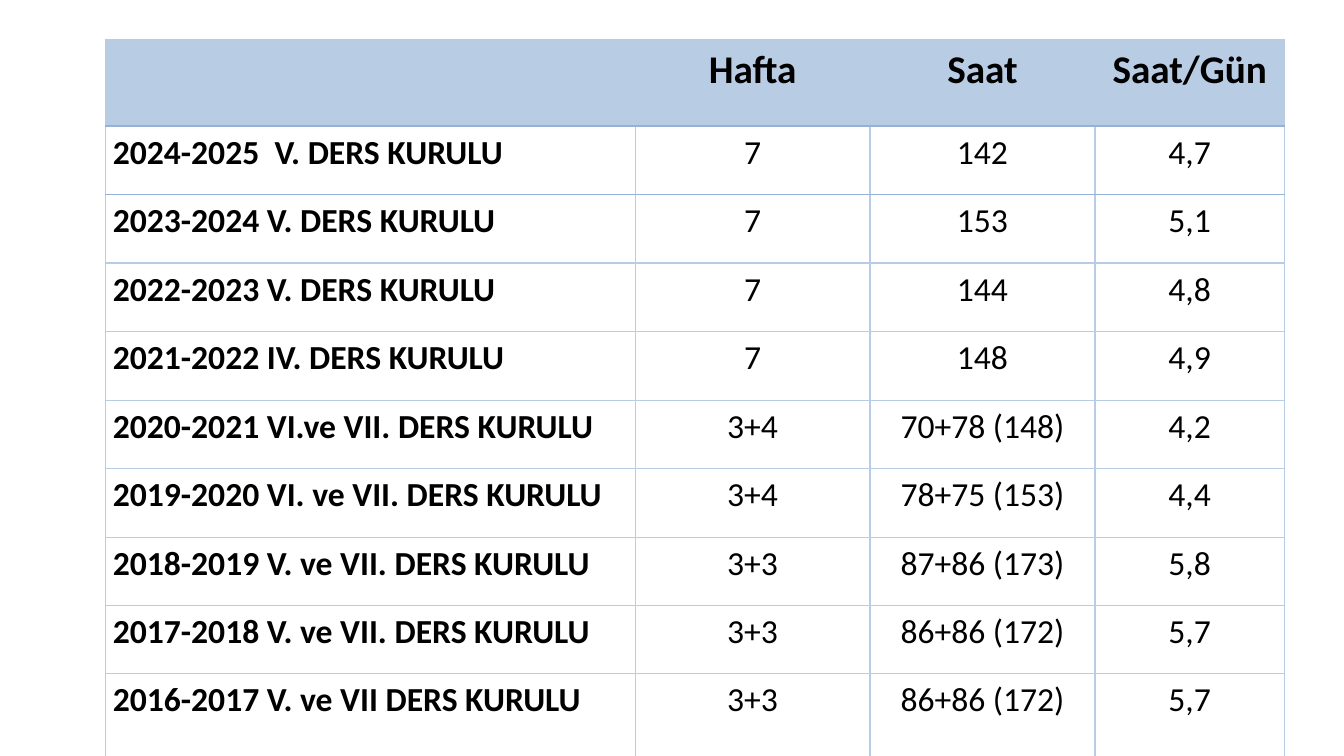
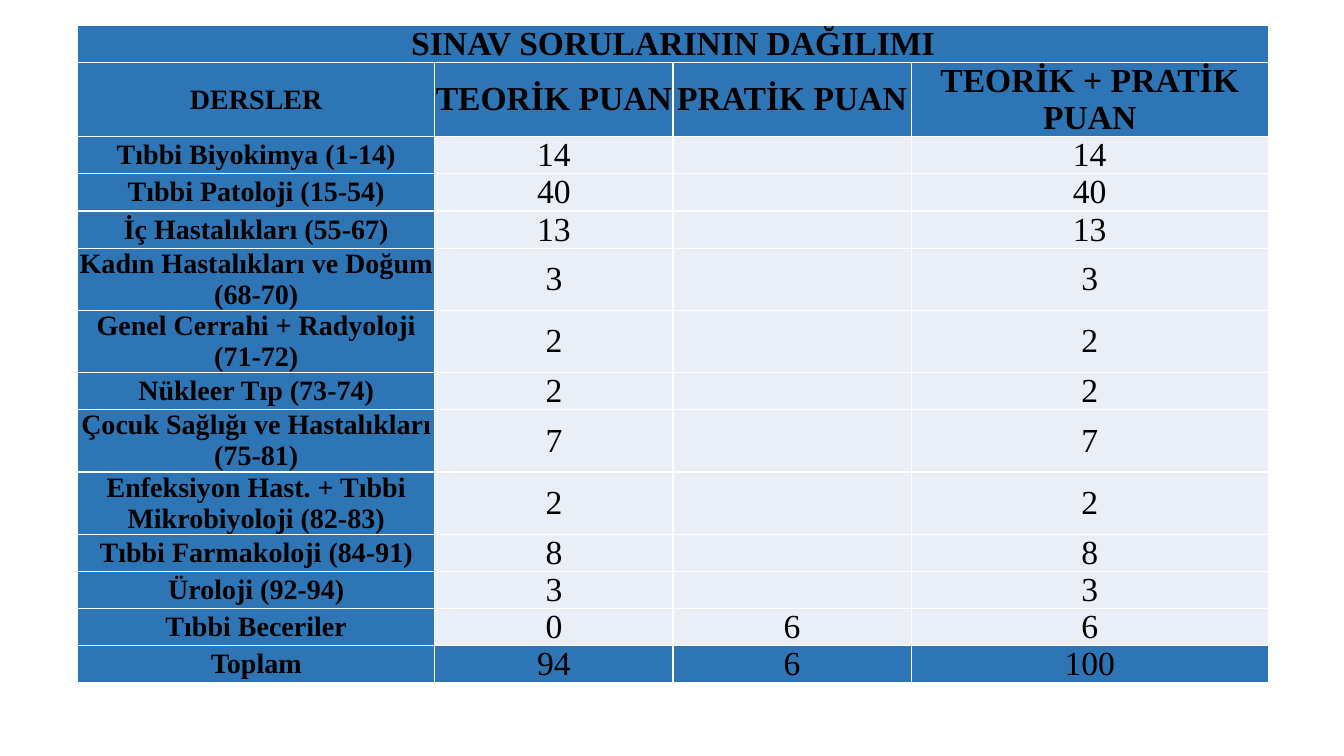
from lxml.etree import SubElement
from pptx import Presentation
from pptx.dml.color import RGBColor
from pptx.enum.text import MSO_ANCHOR as Anchor, PP_ALIGN as Align
from pptx.oxml.ns import qn
from pptx.util import Inches, Pt

BLACK = RGBColor(0x00, 0x00, 0x00)
WHITE = RGBColor(0xFF, 0xFF, 0xFF)
PALE_BLUE = RGBColor(0xB8, 0xCC, 0xE4)
RULE_BLUE = RGBColor(0x95, 0xB3, 0xD7)
STRONG_BLUE = RGBColor(0x2E, 0x75, 0xB6)
ICE_BLUE = RGBColor(0xEA, 0xEF, 0xF7)

SLIDE_WIDTH, SLIDE_HEIGHT = 13.33, 7.5
BLANK_LAYOUT = 6

HOURS_BOX = (1.05, 0.39, 11.69, 7.18)
HOURS_COLUMNS = (5.25, 2.33, 2.23, 1.88)
HOURS_ROWS = [0.86] + [0.68] * 7 + [0.67, 0.89]
HOURS = [
    ("", "Hafta", "Saat", "Saat/Gün"),
    ("2024-2025  V. DERS KURULU", "7", "142", "4,7"),
    ("2023-2024 V. DERS KURULU", "7", "153", "5,1"),
    ("2022-2023 V. DERS KURULU", "7", "144", "4,8"),
    ("2021-2022 IV. DERS KURULU", "7", "148", "4,9"),
    ("2020-2021 VI.ve VII. DERS KURULU", "3+4", "70+78 (148)", "4,2"),
    ("2019-2020 VI. ve VII. DERS KURULU", "3+4", "78+75 (153)", "4,4"),
    ("2018-2019 V. ve VII. DERS KURULU", "3+3", "87+86 (173)", "5,8"),
    ("2017-2018 V. ve VII. DERS KURULU", "3+3", "86+86 (172)", "5,7"),
    ("2016-2017 V. ve VII DERS KURULU", "3+3", "86+86 (172)", "5,7"),
]

POINTS_BOX = (0.77, 0.25, 11.81, 6.36)
POINTS_COLUMNS = (3, 2, 2, 3)
POINTS_ROWS = (3, 6, 3, 3, 3, 5, 5, 3, 5, 5, 3, 3, 3, 3)
POINTS = [
    ("SINAV SORULARININ DAĞILIMI", "", "", ""),
    ("DERSLER", "TEORİK PUAN", "PRATİK PUAN", "TEORİK + PRATİK PUAN"),
    ("Tıbbi Biyokimya (1-14)", "14", "", "14"),
    ("Tıbbi Patoloji (15-54)", "40", "", "40"),
    ("İç Hastalıkları (55-67)", "13", "", "13"),
    ("Kadın Hastalıkları ve Doğum (68-70)", "3", "", "3"),
    ("Genel Cerrahi + Radyoloji (71-72)", "2", "", "2"),
    ("Nükleer Tıp (73-74)", "2", "", "2"),
    ("Çocuk Sağlığı ve Hastalıkları (75-81)", "7", "", "7"),
    ("Enfeksiyon Hast. + Tıbbi Mikrobiyoloji (82-83)", "2", "", "2"),
    ("Tıbbi Farmakoloji (84-91)", "8", "", "8"),
    ("Üroloji (92-94)", "3", "", "3"),
    ("Tıbbi Beceriler", "0", "6", "6"),
    ("Toplam", "94", "6", "100"),
]


def add_grid(slide, box, column_shares, row_shares):
    """Add an unstyled table whose columns and rows share out the box."""
    left, top, width, height = box
    frame = slide.shapes.add_table(
        len(row_shares), len(column_shares),
        Inches(left), Inches(top), Inches(width), Inches(height))
    table = frame.table
    table.first_row = table.horz_banding = False
    for column, share in zip(table.columns, column_shares):
        column.width = Inches(width * share / sum(column_shares))
    for row, share in zip(table.rows, row_shares):
        row.height = Inches(height * share / sum(row_shares))
    return table


def set_borders(cell, sides):
    """Draw the left, right, top and bottom borders from (colour, width) pairs."""
    properties = cell._tc.get_or_add_tcPr()
    for name, (color, width) in zip(("a:lnL", "a:lnR", "a:lnT", "a:lnB"), sides):
        line = SubElement(properties, qn(name), w=str(Pt(width)))
        fill = SubElement(line, qn("a:solidFill"))
        SubElement(fill, qn("a:srgbClr"), val=str(color))


def fill_cell(cell, color):
    """Fill the cell with a colour, or leave it clear."""
    if color is None:
        cell.fill.background()
    else:
        cell.fill.solid()
        cell.fill.fore_color.rgb = color


def write_cell(cell, text, font_name, size, bold, align=Align.CENTER,
               spacing=1.0, side_margin=0, anchor=Anchor.TOP):
    """Write one formatted paragraph into the cell."""
    cell.margin_left = cell.margin_right = Inches(side_margin)
    cell.margin_top = cell.margin_bottom = 0
    cell.vertical_anchor = anchor
    paragraph = cell.text_frame.paragraphs[0]
    paragraph.text = text
    paragraph.alignment = align
    paragraph.line_spacing = spacing
    for run in paragraph.runs:
        run.font.name = font_name
        run.font.size = Pt(size)
        run.font.bold = bold
        run.font.color.rgb = BLACK


def add_hours_table(slide, box):
    """Place the weekly hours of each year's course board in the box."""
    table = add_grid(slide, box, HOURS_COLUMNS, HOURS_ROWS)
    thin, thick = (PALE_BLUE, 1), (RULE_BLUE, 1.5)
    for row, values in enumerate(HOURS):
        header = row == 0
        above = thick if row in (1, 2) else thin
        below = thick if row in (0, 1) else thin
        for column, text in enumerate(values):
            cell = table.cell(row, column)
            set_borders(cell, (thin, thin, above, below))
            fill_cell(cell, PALE_BLUE if header else None)
            write_cell(cell, text, "Calibri", 28 if header else 24,
                       header or column == 0,
                       Align.CENTER if column else Align.LEFT,
                       spacing=1.15, side_margin=0.07)


def add_points_table(slide, box):
    """Place the distribution of exam points by subject in the box."""
    table = add_grid(slide, box, POINTS_COLUMNS, POINTS_ROWS)
    last_row, last_column = len(POINTS) - 1, len(POINTS_COLUMNS) - 1
    for row, values in enumerate(POINTS):
        for column, text in enumerate(values):
            cell = table.cell(row, column)
            heading = row < 2 or column == 0
            set_borders(cell, [(WHITE, 1)] * 4)
            fill_cell(cell, STRONG_BLUE if heading or row == last_row else ICE_BLUE)
            write_cell(cell, text, "Times New Roman",
                       20 if column == 0 and row else 24, heading,
                       anchor=Anchor.MIDDLE)
    table.cell(0, 0).merge(table.cell(0, last_column))


def main():
    """Build and save the presentation."""
    presentation = Presentation()
    presentation.slide_width = Inches(SLIDE_WIDTH)
    presentation.slide_height = Inches(SLIDE_HEIGHT)
    layout = presentation.slide_layouts[BLANK_LAYOUT]
    for add_table, box in ((add_hours_table, HOURS_BOX),
                           (add_points_table, POINTS_BOX)):
        add_table(presentation.slides.add_slide(layout), box)
    presentation.save("out.pptx")


if __name__ == "__main__":
    main()
